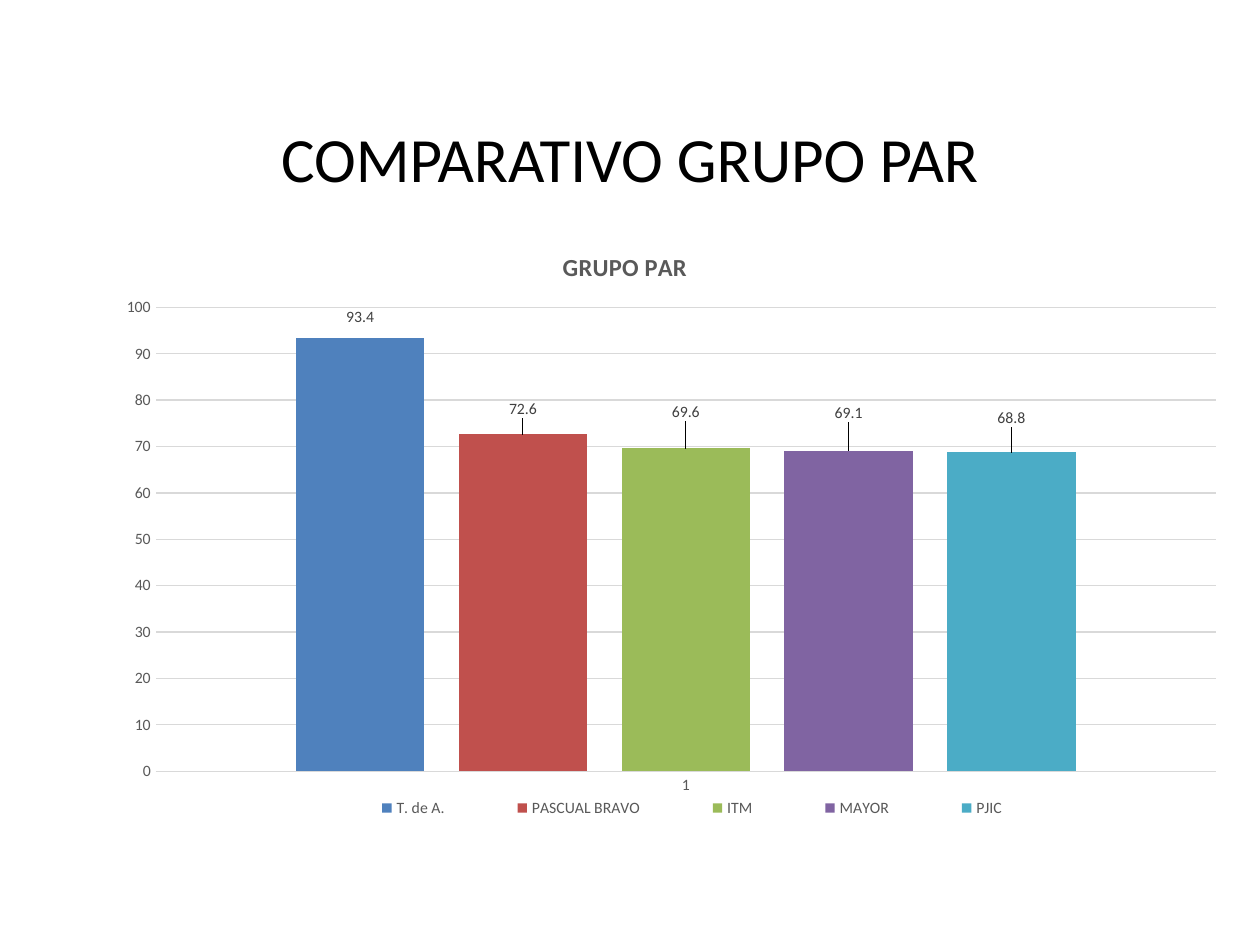
from pptx import Presentation
from pptx.chart.data import CategoryChartData
from pptx.dml.color import RGBColor
from pptx.enum.chart import (XL_CHART_TYPE as CT, XL_LABEL_POSITION as LP,
                             XL_LEGEND_POSITION as LEG, XL_TICK_MARK as TM)
from pptx.enum.text import MSO_ANCHOR, PP_ALIGN
from pptx.oxml import parse_xml
from pptx.oxml.ns import nsdecls
from pptx.util import Cm, Pt

FONT = "Calibri"
GRAY, GRID = "595959", "D9D9D9"
GROUPS = [
    ("T. de A.", 93.4, "4F81BD", -0.011),
    ("PASCUAL BRAVO", 72.6, "C0504D", -0.018),
    ("ITM", 69.6, "9BBB59", -0.035),
    ("MAYOR", 69.1, "8064A2", -0.037),
    ("PJIC", 68.8, "4BACC6", -0.032),
]


def rgb(value):
    return RGBColor.from_string(value)


def set_font(font, size, color, bold=False):
    font.name = FONT
    font.size = Pt(size)
    font.bold = bold
    font.color.rgb = rgb(color)


def set_line(line, color):
    line.color.rgb = rgb(color)
    line.width = Pt(0.75)


def layout(x, y, w=None, h=None, inner=False, absolute=True):
    parts = [("layoutTarget", "inner")] if inner else []
    if absolute:
        parts += [("xMode", "edge"), ("yMode", "edge")]
    parts += [("x", x), ("y", y)]
    if w is not None:
        parts += [("w", w), ("h", h)]
    body = "".join(f'<c:{tag} val="{val}"/>' for tag, val in parts)
    return parse_xml(f'<c:layout {nsdecls("c")}><c:manualLayout>{body}'
                     '</c:manualLayout></c:layout>')


def place(parent, new, after=None):
    for old in parent.findall(new.tag):
        parent.remove(old)
    if after is None:
        parent.insert(0, new)
    else:
        after.addnext(new)


def add_title(slide, left, top, width, height):
    tf = slide.shapes.add_textbox(left, top, width, height).text_frame
    tf.word_wrap = True
    tf.vertical_anchor = MSO_ANCHOR.BOTTOM
    tf.margin_bottom = 0
    tf.text = "COMPARATIVO GRUPO PAR"
    p = tf.paragraphs[0]
    p.alignment = PP_ALIGN.CENTER
    set_font(p.runs[0].font, 36, "000000")


def style_axes(chart):
    cat, val = chart.category_axis, chart.value_axis
    for axis in (cat, val):
        axis.major_tick_mark = axis.minor_tick_mark = TM.NONE
        set_font(axis.tick_labels.font, 9, GRAY)
    set_line(cat.format.line, GRID)
    val.format.line.fill.background()
    set_line(val.major_gridlines.format.line, GRID)
    val.minimum_scale, val.maximum_scale, val.major_unit = 0, 100, 10


def style_series(series, color, shift):
    series.format.fill.solid()
    series.format.fill.fore_color.rgb = rgb(color)
    labels = series.data_labels
    labels.show_value = True
    set_font(labels.font, 9, "404040")
    label = series.points[0].data_label
    label.position = LP.OUTSIDE_END
    set_font(label.font, 9, "404040")
    c = "{http://schemas.openxmlformats.org/drawingml/2006/chart}"
    dLbl = next(series._element.iter(c + "dLbl"))
    place(dLbl, layout(0, shift, absolute=False), dLbl.find(c + "idx"))


def add_group_chart(slide, left, top, width, height):
    data = CategoryChartData()
    data.categories = ["1"]
    for name, value, _, _ in GROUPS:
        data.add_series(name, [value])
    chart = slide.shapes.add_chart(CT.COLUMN_CLUSTERED, left, top,
                                   width, height, data).chart
    set_font(chart.font, 10, "000000")
    plot = chart.plots[0]
    plot.gap_width, plot.overlap, plot.vary_by_categories = 219, -27, False
    for series, (_, _, color, shift) in zip(plot.series, GROUPS):
        style_series(series, color, shift)
    style_axes(chart)

    chart.has_title = True
    title = chart.chart_title
    title.text_frame.text = "GRUPO PAR"
    set_font(title.text_frame.paragraphs[0].runs[0].font, 14, GRAY, True)
    place(title._element, layout(0.4, 0.04), title._element.tx)

    chart.has_legend = True
    legend = chart.legend
    legend.position = LEG.BOTTOM
    legend.include_in_layout = False
    set_font(legend.font, 9, GRAY)
    place(legend._element, layout(0.185, 0.917, 0.666, 0.05),
          legend._element.legendPos)
    place(chart._chartSpace.chart.plotArea,
          layout(0.045, 0.139, 0.935, 0.744, inner=True))


def main():
    prs = Presentation()
    prs.slide_width, prs.slide_height = Cm(25.4), Cm(19.05)
    slide = prs.slides.add_slide(prs.slide_layouts[6])
    add_title(slide, Cm(1.27), Cm(0.76), Cm(22.86), Cm(3.18))
    add_group_chart(slide, Cm(2.11), Cm(4.45), Cm(22.86), Cm(12.57))
    prs.save("out.pptx")


if __name__ == "__main__":
    main()
